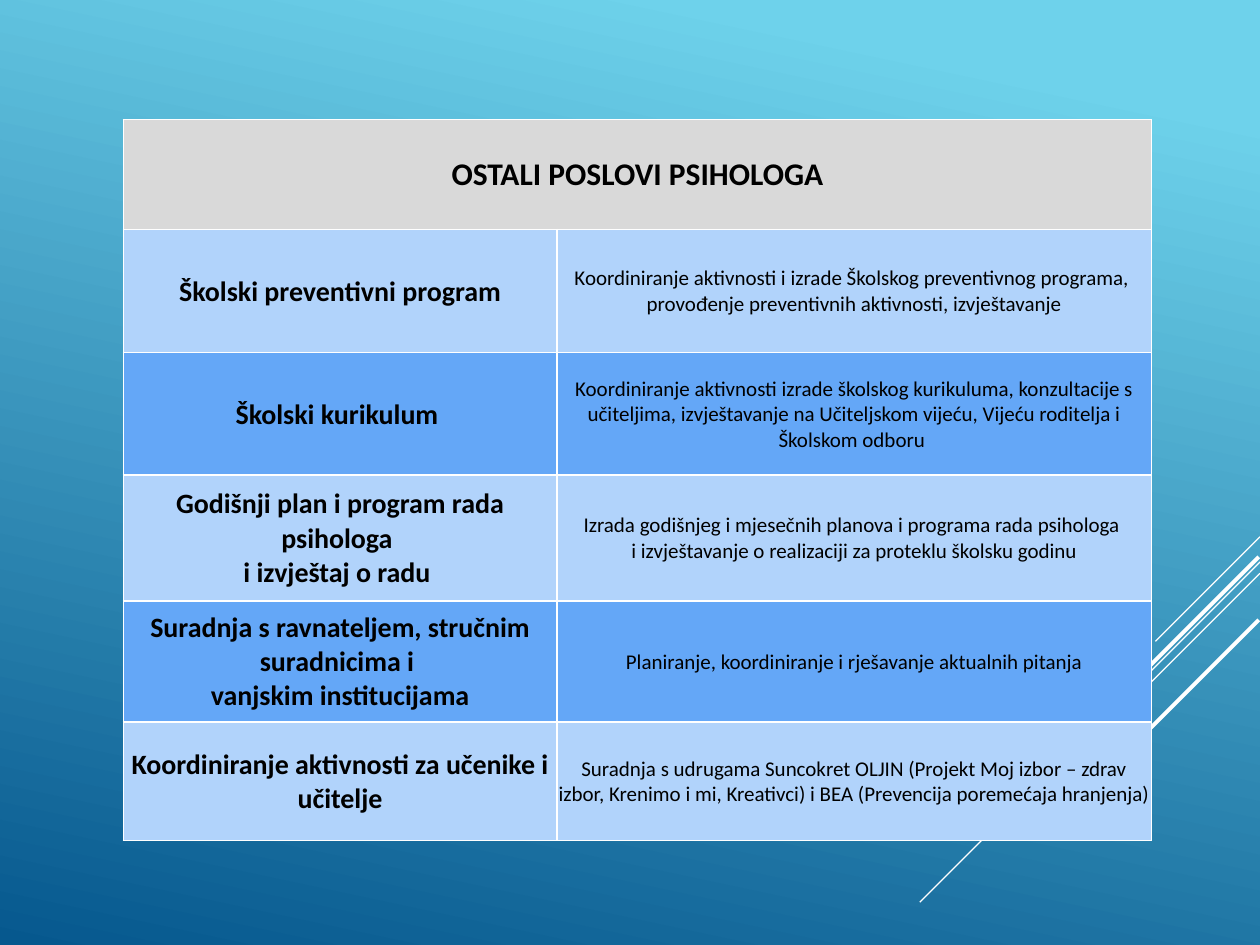
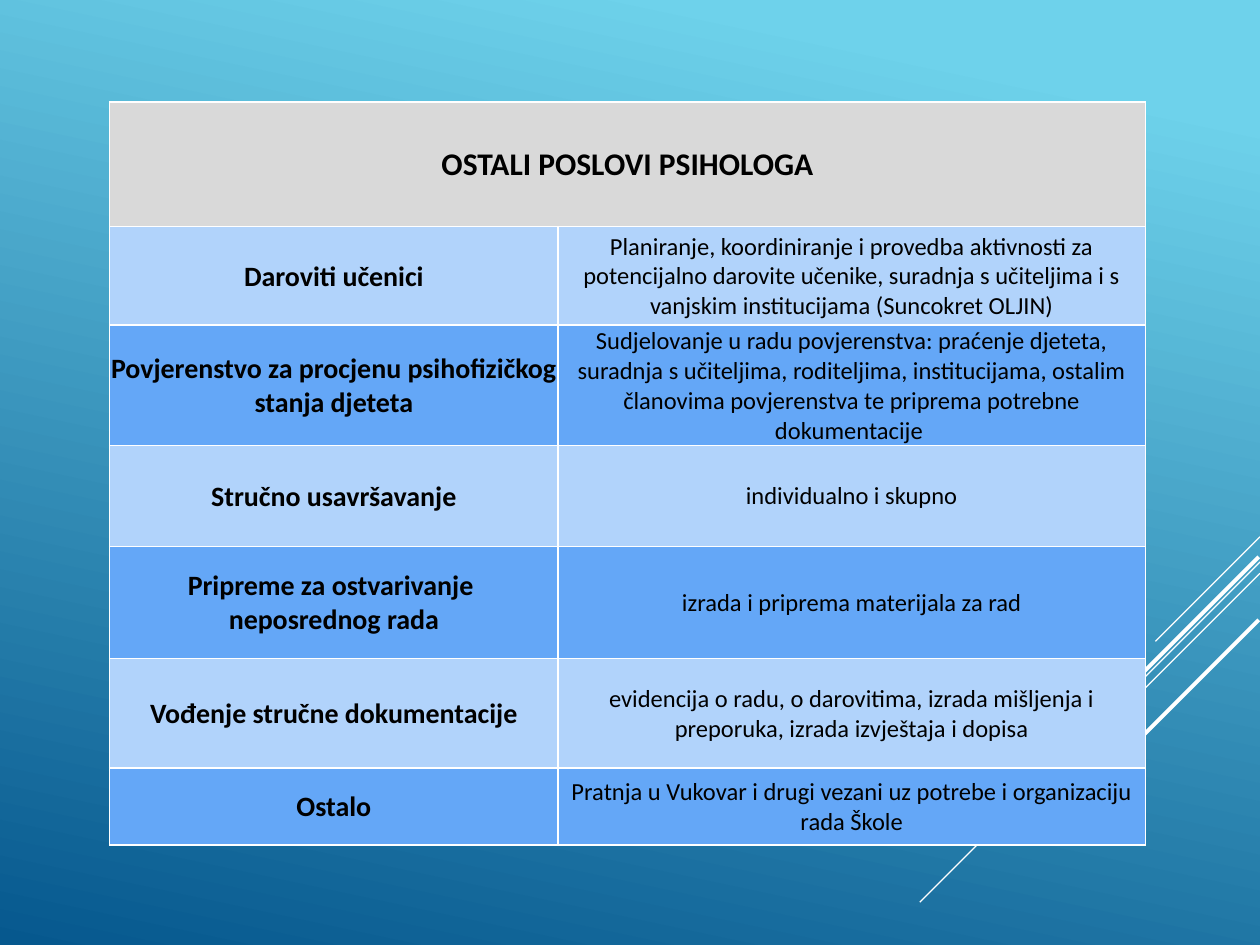
from dataclasses import dataclass

from lxml import etree
from pptx import Presentation
from pptx.dml.color import RGBColor
from pptx.enum.shapes import MSO_CONNECTOR
from pptx.enum.text import MSO_ANCHOR, PP_ALIGN
from pptx.oxml.ns import qn
from pptx.util import Inches, Pt

STRAIGHT = MSO_CONNECTOR.STRAIGHT
MIDDLE = MSO_ANCHOR.MIDDLE
CENTER = PP_ALIGN.CENTER
BLANK_LAYOUT = 6


@dataclass(frozen=True)
class Theme:
    font: str = "Calibri"
    text: str = "000000"
    line: str = "FFFFFF"
    header: str = "D9D9D9"
    bands: tuple[str, str] = ("B1D3FB", "64A7F7")
    gradient: tuple[tuple[float, str], ...] = ((0.1, "6ED2EB"), (1.0, "06588E"))
    gradient_angle: int = 102  # clockwise
    header_size: int = 18
    label_size: int = 16
    border_width: float = 1
    thin: float = 0.75
    thick: float = 2.25


THEME = Theme()


@dataclass(frozen=True)
class Streak:
    """A 45-degree line running down and left from its right end."""
    x: float
    y: float
    run: float
    width: float


@dataclass(frozen=True)
class Job:
    label: str
    details: str
    height: float


@dataclass(frozen=True)
class JobTable:
    left: float
    top: float
    columns: tuple[float, float]
    header_height: float
    detail_size: int
    jobs: tuple[Job, ...]


HEADER = "OSTALI POSLOVI PSIHOLOGA"

STREAKS = (
    Streak(10, 4.26, 0.83, THEME.thin),
    Streak(10, 4.46, 2.7, THEME.thin),
    Streak(10, 4.55, 1.72, THEME.thin),
    Streak(9.99, 4.42, 1.57, THEME.thick),
    Streak(9.99, 4.92, 1.14, THEME.thick),
)

TABLES = (
    JobTable(0.98, 0.95, (3.44, 4.72), 0.87, 12, (
        Job("Školski preventivni program",
            "Koordiniranje aktivnosti i izrade Školskog preventivnog programa, \n"
            "provođenje preventivnih aktivnosti, izvještavanje", 0.98),
        Job("Školski kurikulum ",
            "Koordiniranje aktivnosti izrade školskog kurikuluma, konzultacije s "
            "učiteljima, izvještavanje na Učiteljskom vijeću, Vijeću roditelja i "
            "Školskom odboru ", 0.97),
        Job("Godišnji plan i program rada psihologa \ni izvještaj o radu ",
            "Izrada godišnjeg i mjesečnih planova i programa rada psihologa \n"
            "i izvještavanje o realizaciji za proteklu školsku godinu", 1),
        Job("Suradnja s ravnateljem, stručnim suradnicima i \nvanjskim institucijama",
            "Planiranje, koordiniranje i rješavanje aktualnih pitanja", 0.96),
        Job("Koordiniranje aktivnosti za učenike i učitelje",
            "Suradnja s udrugama Suncokret OLJIN (Projekt Moj izbor – zdrav izbor, "
            "Krenimo i mi, Kreativci) i BEA (Prevencija poremećaja hranjenja)", 0.94),
    )),
    JobTable(0.87, 0.81, (3.56, 4.66), 0.99, 14, (
        Job("Daroviti učenici",
            "Planiranje, koordiniranje i provedba aktivnosti za potencijalno darovite "
            "učenike, suradnja s učiteljima i s vanjskim institucijama "
            "(Suncokret OLJIN)", 0.78),
        Job("Povjerenstvo za procjenu psihofizičkog stanja djeteta",
            "Sudjelovanje u radu povjerenstva: praćenje djeteta, suradnja s učiteljima, "
            "roditeljima, institucijama, ostalim članovima povjerenstva te priprema "
            "potrebne dokumentacije ", 0.83),
        Job("Stručno usavršavanje", "individualno i skupno", 0.8),
        Job("Pripreme za ostvarivanje \nneposrednog rada",
            "izrada i priprema materijala za rad", 0.89),
        Job("Vođenje stručne dokumentacije",
            "evidencija o radu, o darovitima, izrada mišljenja i preporuka, "
            "izrada izvještaja i dopisa", 0.87),
        Job("Ostalo",
            "Pratnja u Vukovar i drugi vezani uz potrebe i organizaciju rada Škole",
            0.61),
    )),
)


def rgb(color: str) -> RGBColor:
    return RGBColor.from_string(color)


def set_background(master) -> None:
    fill = master.background.fill
    fill.gradient()
    fill.gradient_angle = 360 - THEME.gradient_angle
    for stop, (position, color) in zip(fill.gradient_stops, THEME.gradient):
        stop.position = position
        stop.color.rgb = rgb(color)


def add_streak(s, streak: Streak) -> None:
    line = s.shapes.add_connector(
        STRAIGHT, Inches(streak.x), Inches(streak.y),
        Inches(streak.x - streak.run), Inches(streak.y + streak.run))
    line.line.color.rgb = rgb(THEME.line)
    line.line.width = Pt(streak.width)
    etree.SubElement(line._element.spPr, qn("a:effectLst"))


def add_borders(cell) -> None:
    tc_pr = cell._tc.get_or_add_tcPr()
    for side in ("a:lnL", "a:lnR", "a:lnT", "a:lnB"):
        ln = etree.SubElement(tc_pr, qn(side), w=str(Pt(THEME.border_width)))
        fill = etree.SubElement(ln, qn("a:solidFill"))
        etree.SubElement(fill, qn("a:srgbClr"), val=THEME.line)


def format_cell(cell, text: str, fill: str, size: int, bold: bool) -> None:
    add_borders(cell)
    cell.fill.solid()
    cell.fill.fore_color.rgb = rgb(fill)
    cell.margin_left = cell.margin_right = cell.margin_top = Inches(0.01)
    cell.margin_bottom = 0
    cell.vertical_anchor = MIDDLE
    cell.text = text
    for p in cell.text_frame.paragraphs:
        p.alignment = CENTER
        p.font.name = THEME.font
        p.font.size = Pt(size)
        p.font.bold = bold
        p.font.color.rgb = rgb(THEME.text)


def add_job_table(s, spec: JobTable) -> None:
    heights = [spec.header_height, *(job.height for job in spec.jobs)]
    table = s.shapes.add_table(
        len(heights), len(spec.columns), Inches(spec.left), Inches(spec.top),
        Inches(sum(spec.columns)), Inches(sum(heights))).table
    table.first_row = table.horz_banding = False
    for column, width in zip(table.columns, spec.columns):
        column.width = Inches(width)
    for row, height in zip(table.rows, heights):
        row.height = Inches(height)

    header = table.cell(0, 0)
    header.merge(table.cell(0, 1))
    format_cell(header, HEADER, THEME.header, THEME.header_size, True)
    add_borders(table.cell(0, 1))
    for i, job in enumerate(spec.jobs):
        band = THEME.bands[i % 2]
        format_cell(table.cell(i + 1, 0), job.label, band, THEME.label_size, True)
        format_cell(table.cell(i + 1, 1), job.details, band, spec.detail_size, False)


def main() -> None:
    prs = Presentation()
    prs.slide_width, prs.slide_height = Inches(10), Inches(7.5)
    set_background(prs.slide_master)
    for spec in TABLES:
        s = prs.slides.add_slide(prs.slide_layouts[BLANK_LAYOUT])
        for streak in STREAKS:
            add_streak(s, streak)
        add_job_table(s, spec)
    prs.save("out.pptx")


if __name__ == "__main__":
    main()
